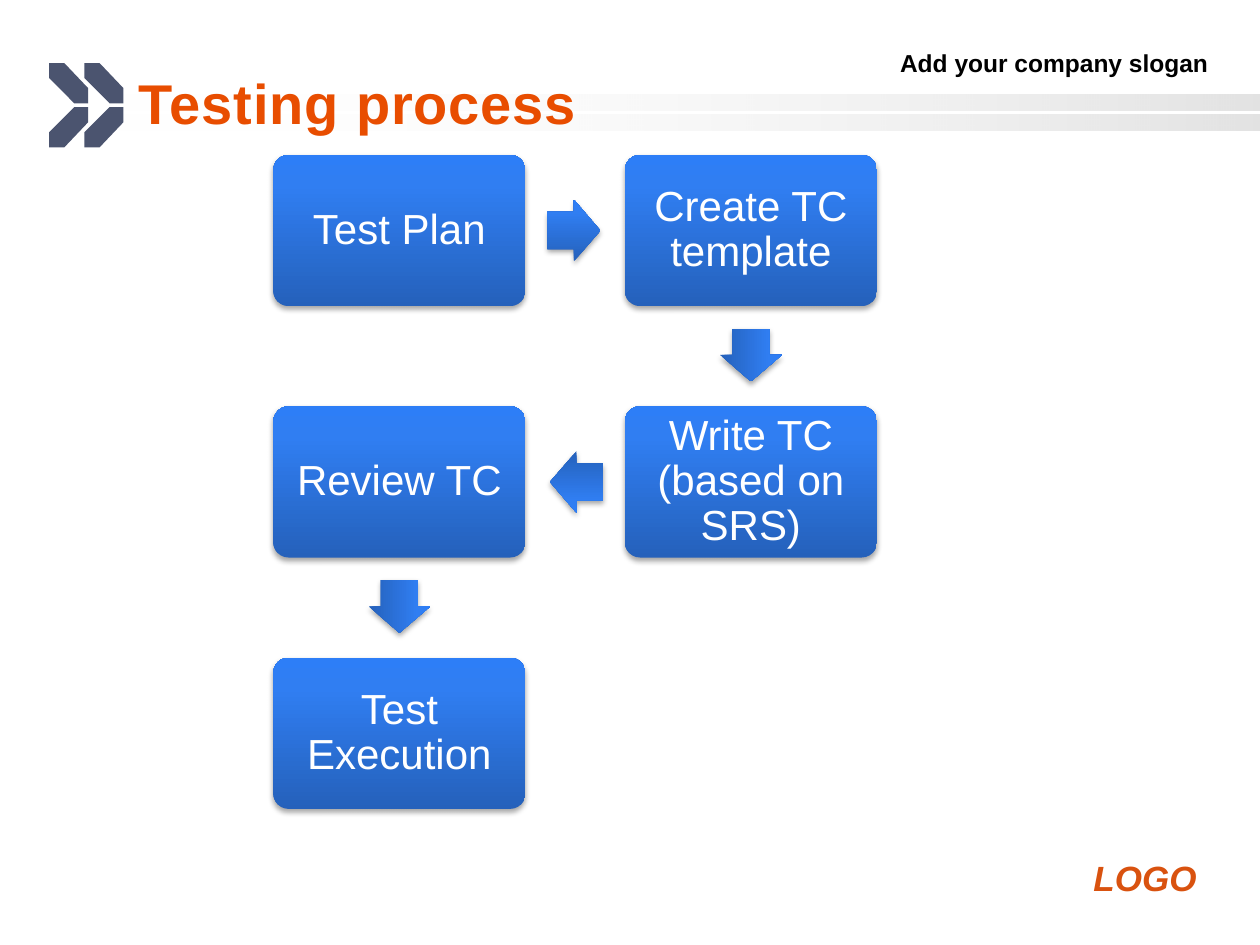
import pptx
import pptx.util
import pptx.oxml
import pptx.oxml.ns
import pptx.dml.color
import pptx.enum.shapes
import pptx.enum.text

COLORS = {
    "title": "E84D00", "logo": "D9520F", "slogan": "000000", "chevron": "4B546F",
    "bar_start": "FFFFFF", "bar_end": "969696", "step_text": "FFFFFF",
    "step_dark": "2561BB", "step_mid": "307EF2", "step_light": "2D7EF7",
    "shadow": "000000", "logo_shadow": "808080",
}
NS = pptx.oxml.ns.nsdecls("a")
SHAPES = pptx.enum.shapes.MSO_SHAPE
ALIGN = pptx.enum.text.PP_ALIGN
MIDDLE = pptx.enum.text.MSO_ANCHOR.MIDDLE

deck = pptx.Presentation()
deck.slide_width = pptx.util.Inches(10)
deck.slide_height = pptx.util.Inches(7.5)
slide = deck.slides.add_slide(deck.slide_layouts[5])
column = deck.slide_width / 100
row = deck.slide_height / 100


def paint(shape, stops, angle):
    """Fill with a linear gradient of (position, colour, opacity) stops, without outline or shadow."""
    stop_xml = "".join(
        f'<a:gs pos="{position * 1000}"><a:srgbClr val="{COLORS[color]}">'
        f'<a:alpha val="{opacity * 1000}"/></a:srgbClr></a:gs>'
        for position, color, opacity in stops)
    shape.element.spPr.append(pptx.oxml.parse_xml(
        f'<a:gradFill {NS} rotWithShape="1"><a:gsLst>{stop_xml}</a:gsLst>'
        f'<a:lin ang="{angle * 60000}" scaled="0"/></a:gradFill>'))
    shape.line.fill.background()
    shape.shadow.inherit = False


def write(shape, text, color, align, font_format):
    frame = shape.text_frame
    frame.word_wrap = True
    frame.text = text
    paragraph = frame.paragraphs[0]
    paragraph.alignment = align
    font = paragraph.runs[0].font
    font.name = "Arial"
    font.color.rgb = pptx.dml.color.RGBColor.from_string(COLORS[color])
    for name, value in font_format.items():
        setattr(font, name, value)
    return paragraph


# Header bars
for bar_top in (10, 12.13):
    bar = slide.shapes.add_shape(SHAPES.RECTANGLE, int(7.5 * column), int(bar_top * row),
                                 int(92.5 * column), int(1.73 * row))
    paint(bar, [(0, "bar_start", 0), (100, "bar_end", 27)], 0)

# Double chevron, in thousandths of the width and 750ths of the height
upper_arm = [(39, 50), (39, 62), (59, 82), (70, 82), (70, 70), (51, 50)]
lower_arm = [(70, 85), (59, 85), (39, 105), (39, 117), (51, 117), (70, 97)]
for shift in (0, 28):
    for arm in (upper_arm, lower_arm):
        points = [(x + shift, y) for x, y in arm]
        outline = slide.shapes.build_freeform(*points[0], scale=(column / 10, row / 7.5))
        outline.add_line_segments(points[1:], close=True)
        chevron = outline.convert_to_shape()
        chevron.fill.solid()
        chevron.fill.fore_color.rgb = pptx.dml.color.RGBColor.from_string(COLORS["chevron"])
        chevron.line.fill.background()
        chevron.shadow.inherit = False

# Slogan and logo word
slogan = slide.shapes.add_textbox(int(36.7 * column), int(4.4 * row),
                                  int(60.2 * column), int(4.4 * row))
write(slogan, "Add your company slogan", "slogan", ALIGN.RIGHT,
      {"size": pptx.util.Pt(14), "bold": True})
logo_word = slide.shapes.add_textbox(int(85.8 * column), int(90 * row),
                                     int(11.7 * column), int(5.73 * row))
logo_line = write(logo_word, "LOGO", "logo", ALIGN.LEFT,
                  {"size": pptx.util.Pt(20), "bold": True, "italic": True})
logo_fill = logo_line.runs[0].font._element.find(pptx.oxml.ns.qn("a:solidFill"))
logo_fill.addnext(pptx.oxml.parse_xml(
    f'<a:effectLst {NS}><a:outerShdw dist="35921" dir="2700000">'
    f'<a:srgbClr val="{COLORS["logo_shadow"]}"/></a:outerShdw></a:effectLst>'))

# Process: each step has a grid column and row, and an arrow leads to the next one
steps = [("Test Plan", 0, 0), ("Create TC template", 1, 0), ("Write TC (based on SRS)", 1, 1),
         ("Review TC", 0, 1), ("Test Execution", 0, 2)]
step_width, step_height = 20 * column, 16 * row
arrow_width, arrow_height = 4.2 * column, 6.53 * row
rotations = {(1, 0): 0, (0, 1): 90, (-1, 0): 180}
centers = [((31.7 + 27.9 * across) * column, (24.4 + 26.6 * down) * row)
           for _, across, down in steps]
flow = []
for (text, _, _), (x, y) in zip(steps, centers):
    step = slide.shapes.add_shape(SHAPES.ROUNDED_RECTANGLE, int(x - step_width / 2),
                                  int(y - step_height / 2), int(step_width), int(step_height))
    step.adjustments[0] = 0.1
    for side in ("left", "top", "right", "bottom"):
        setattr(step.text_frame, f"margin_{side}", pptx.util.Inches(0.12))
    step.text_frame.vertical_anchor = MIDDLE
    label = write(step, text, "step_text", ALIGN.CENTER, {"size": pptx.util.Pt(24)})
    label.line_spacing = 0.9
    flow.append(step)

for index in range(len(steps) - 1):
    (_, across, down), (_, next_across, next_down) = steps[index:index + 2]
    (x, y), (next_x, next_y) = centers[index:index + 2]
    direction = (next_across - across, next_down - down)
    # Arrows sit slightly nearer to the step they leave
    left = (x + next_x - arrow_width) / 2 - 0.1 * column * direction[0]
    top = (y + next_y - arrow_height) / 2 - 0.1 * column * direction[1]
    arrow = slide.shapes.add_shape(SHAPES.RIGHT_ARROW, int(left), int(top),
                                   int(arrow_width), int(arrow_height))
    arrow.adjustments[0] = 0.6
    arrow.adjustments[1] = 0.5
    arrow.rotation = rotations[direction]
    flow.append(arrow)

for part in flow:
    paint(part, [(0, "step_dark", 100), (80, "step_mid", 100), (100, "step_light", 100)], 270)
    effects = part.element.spPr.find(pptx.oxml.ns.qn("a:effectLst"))
    effects.append(pptx.oxml.parse_xml(
        f'<a:outerShdw {NS} blurRad="39370" dist="22860" dir="5400000" rotWithShape="0">'
        f'<a:srgbClr val="{COLORS["shadow"]}"><a:alpha val="35000"/></a:srgbClr></a:outerShdw>'))

# Title, in front of the header bars
title = slide.shapes.title
title.left, title.top = int(10 * column), int(6.67 * row)
title.width, title.height = int(82.5 * column), int(8.27 * row)
title.text_frame.vertical_anchor = MIDDLE
heading = write(title, "Testing process", "title", ALIGN.LEFT,
                {"size": pptx.util.Pt(32), "bold": True})
heading.runs[0].font._element.set("spc", "50")
title.element.getparent().append(title.element)

deck.save("out.pptx")
